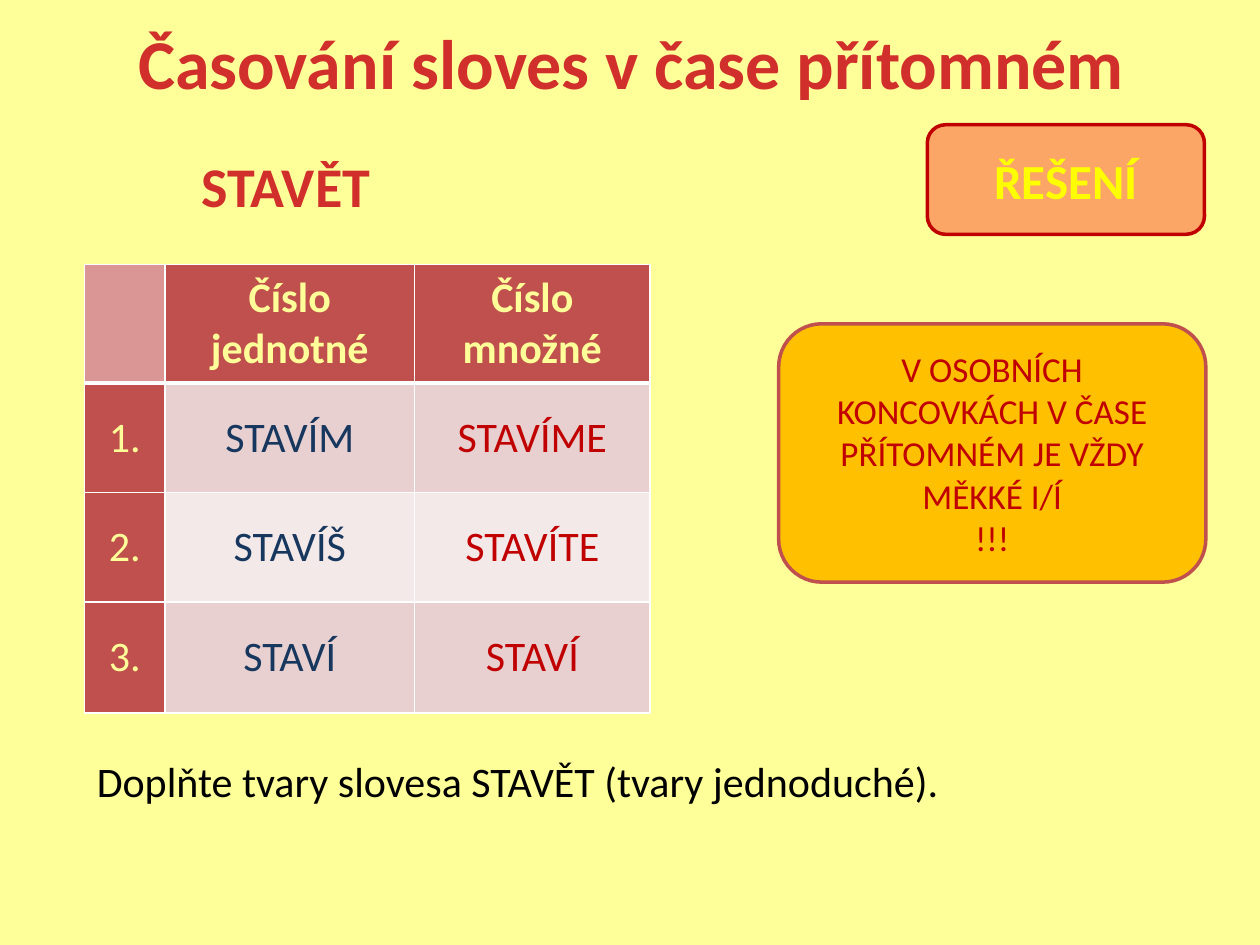
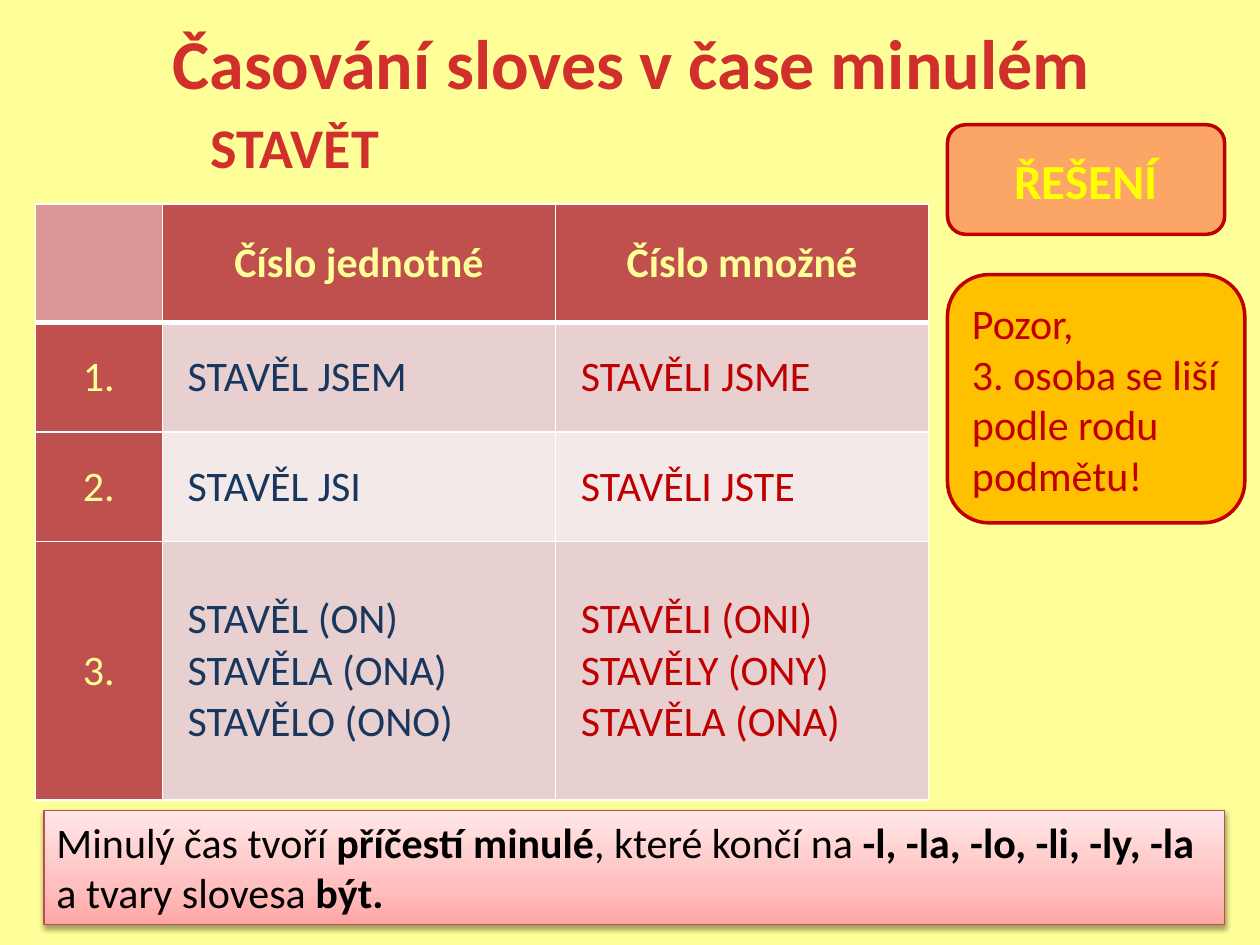
from lxml import etree
from pptx import Presentation
from pptx import util as u
from pptx.dml.color import RGBColor
from pptx.enum import shapes, text
from pptx.oxml import ns

FONT = "Calibri"
COLORS = {
    "page": "FFFF99", "singular": "17375E", "plural": "C00000",
    "head": "C0504D", "corner": "D99694", "band_dark": "E8D0D0",
    "band_light": "F4E9E9", "rule": "FFFFFF", "hint": "FFC000",
    "button": "F61616", "button_text": "FFFF00", "note_line": "BF4C48",
    "black": "000000",
}
TITLE_STOPS = [(0, "FC7C7A"), (75, "D02F2C"), (100, "C70500")]
NOTE_STOPS = [(0, "FFA6A5"), (35, "FFC0BF"), (100, "FFE7E7")]
LEFT, CENTER = text.PP_ALIGN.LEFT, text.PP_ALIGN.CENTER
MIDDLE = text.MSO_ANCHOR.MIDDLE


def rgb(name):
    return RGBColor.from_string(COLORS[name])


def box(*lengths):
    return [u.Inches(length) for length in lengths]


def sub(parent, tag, **attributes):
    """Add a DrawingML child element."""
    child = etree.SubElement(parent, ns.qn("a:" + tag))
    for key, value in attributes.items():
        child.set(key, str(value))
    return child


def set_gradient(fill, owner, stops, angle):
    fill.gradient()
    fill.gradient_angle = angle
    stop_list = owner.find(".//" + ns.qn("a:gsLst"))
    for stop in list(stop_list):
        stop_list.remove(stop)
    for position, color in stops:
        sub(sub(stop_list, "gs", pos=position * 1000), "srgbClr", val=color)


def write(frame, content, size, color=None, bold=False, align=LEFT):
    """Write lines of text; **marked** parts turn bold, no colour means the title gradient."""
    frame.word_wrap = True
    for number, line in enumerate(content.split("\n")):
        paragraph = frame.add_paragraph() if number else frame.paragraphs[0]
        paragraph.alignment = align
        for index, part in enumerate(line.split("**")):
            if not part:
                continue
            run = paragraph.add_run()
            run.text = part
            font = run.font
            font.name, font.size = FONT, u.Pt(size)
            font.bold = bold or index % 2 == 1
            if color:
                font.color.rgb = rgb(color)
            else:
                set_gradient(font.fill, run._r, TITLE_STOPS, 270)


def add_panel(slide, area, kind, line, width):
    panel = slide.shapes.add_shape(kind, *box(*area))
    panel.shadow.inherit = False
    panel.line.color.rgb = rgb(line)
    panel.line.width = u.Pt(width)
    return panel


def add_rounded(slide, area, fill, line):
    panel = add_panel(slide, area, shapes.MSO_SHAPE.ROUNDED_RECTANGLE, line, 2)
    panel.fill.solid()
    panel.fill.fore_color.rgb = rgb(fill)
    panel.text_frame.vertical_anchor = MIDDLE
    return panel


def add_solution_button(slide, left):
    button = add_rounded(slide, (left, 0.99, 2.2, 0.87), "button", "plural")
    fill_color = button._element.spPr.find(ns.qn("a:solidFill"))[0]
    sub(fill_color, "alpha", val=38000)
    write(button.text_frame, "ŘEŠENÍ", 28, "button_text", True, CENTER)


def add_hint(slide, area, content, size, line, align):
    hint = add_rounded(slide, area, "hint", line)
    write(hint.text_frame, content, size, "plural", align=align)


def add_verb(slide, area):
    verb = slide.shapes.add_textbox(*box(*area)).text_frame
    verb.margin_left = u.Inches(1.1)
    write(verb, "STAVĚT", 32, bold=True)


def add_task(slide, area, content):
    task = slide.shapes.add_textbox(*box(*area)).text_frame
    write(task, content, 24, "black")


def add_note(slide, area, content):
    note = add_panel(slide, area, shapes.MSO_SHAPE.RECTANGLE, "note_line", 0.75)
    properties = note._element.spPr
    set_gradient(note.fill, properties, NOTE_STOPS, 90)
    shadow = sub(properties.find(ns.qn("a:effectLst")), "outerShdw",
                 blurRad=u.Pt(3.1), dist=u.Pt(1.6), dir=5400000, rotWithShape=0)
    sub(sub(shadow, "srgbClr", val=COLORS["black"]), "alpha", val=38000)
    note.text_frame.vertical_anchor = text.MSO_ANCHOR.TOP
    write(note.text_frame, content, 24, "black")


def set_borders(cell, row):
    widths = {"lnL": 1, "lnR": 1, "lnT": 3 if row == 1 else 1, "lnB": 3 if row == 0 else 1}
    for side, width in widths.items():
        line = sub(cell._tc.get_or_add_tcPr(), side, w=u.Pt(width))
        sub(sub(line, "solidFill"), "srgbClr", val=COLORS["rule"])


def cell_fill(row, column):
    if row == column == 0:
        return "corner"
    if row == 0 or column == 0:
        return "head"
    return "band_dark" if row % 2 else "band_light"


def add_conjugation(slide, left, top, widths, heights, forms, form_align, form_inset):
    """Persons down, singular and plural across."""
    rows = [("", "Číslo jednotné", "Číslo množné")]
    rows += [(f"{person}.", *pair) for person, pair in enumerate(forms, 1)]
    table = slide.shapes.add_table(
        len(rows), len(widths), *box(left, top, sum(widths), sum(heights))).table
    for column, width in zip(table.columns, widths):
        column.width = u.Inches(width)
    for table_row, height in zip(table.rows, heights):
        table_row.height = u.Inches(height)
    for row, contents in enumerate(rows):
        for column, content in enumerate(contents):
            cell = table.cell(row, column)
            set_borders(cell, row)
            cell.fill.solid()
            cell.fill.fore_color.rgb = rgb(cell_fill(row, column))
            cell.vertical_anchor = MIDDLE
            is_form = row > 0 and column > 0
            if is_form:
                cell.margin_left = u.Inches(form_inset)
            color = ("page", "singular", "plural")[column] if is_form else "page"
            write(cell.text_frame, content, 24, color, row == 0,
                  form_align if is_form else CENTER)


def add_lesson_slide(deck, heading):
    """Yellow page with the shared title style."""
    slide = deck.slides.add_slide(deck.slide_layouts[5])
    slide.background.fill.solid()
    slide.background.fill.fore_color.rgb = rgb("page")
    title = slide.shapes.title
    title.left, title.top, title.width, title.height = box(0.51, 0.02, 9, 0.93)
    title.text_frame.vertical_anchor = MIDDLE
    write(title.text_frame, heading, 40, bold=True, align=CENTER)
    return slide


def build_present_tense(deck):
    slide = add_lesson_slide(deck, "Časování sloves v čase přítomném")
    add_verb(slide, (0.5, 1.15, 9, 5.55))
    forms = [("STAVÍM", "STAVÍME"), ("STAVÍŠ", "STAVÍTE"), ("STAVÍ", "STAVÍ")]
    add_conjugation(slide, 0.67, 2.1, (0.64, 1.98, 1.87), (0.94, 0.87, 0.87, 0.88),
                    forms, CENTER, 0.1)
    add_task(slide, (0.67, 5.95, 8.5, 0.5),
             "Doplňte tvary slovesa STAVĚT (tvary jednoduché).")
    add_hint(slide, (6.18, 2.57, 3.39, 2.05),
             "V OSOBNÍCH KONCOVKÁCH V ČASE PŘÍTOMNÉM JE VŽDY MĚKKÉ I/Í\n!!!",
             20, "head", CENTER)
    add_solution_button(slide, 7.36)


def build_past_tense(deck):
    slide = add_lesson_slide(deck, "Časování sloves v čase minulém")
    add_verb(slide, (0.57, 0.84, 3.49, 0.79))
    forms = [
        ("STAVĚL JSEM", "STAVĚLI JSME"),
        ("STAVĚL JSI", "STAVĚLI JSTE"),
        ("STAVĚL (ON)\nSTAVĚLA (ONA)\nSTAVĚLO (ONO)",
         "STAVĚLI (ONI)\nSTAVĚLY (ONY)\nSTAVĚLA (ONA)"),
    ]
    add_conjugation(slide, 0.28, 1.62, (1.01, 3.12, 2.96), (0.94, 0.87, 0.87, 2.05),
                    forms, LEFT, 0.2)
    add_note(slide, (0.35, 6.43, 9.37, 0.91),
             "Minulý čas tvoří **příčestí minulé**, které končí na "
             "**-l, -la, -lo, -li, -ly, -la**\na tvary slovesa **být.**")
    add_solution_button(slide, 7.52)
    add_hint(slide, (7.52, 2.18, 2.36, 1.97),
             "Pozor,\n3. osoba se liší podle rodu podmětu!", 24, "plural", LEFT)


def main():
    deck = Presentation()
    deck.slide_width, deck.slide_height = box(10, 7.5)
    build_present_tense(deck)
    build_past_tense(deck)
    deck.save("out.pptx")


if __name__ == "__main__":
    main()
